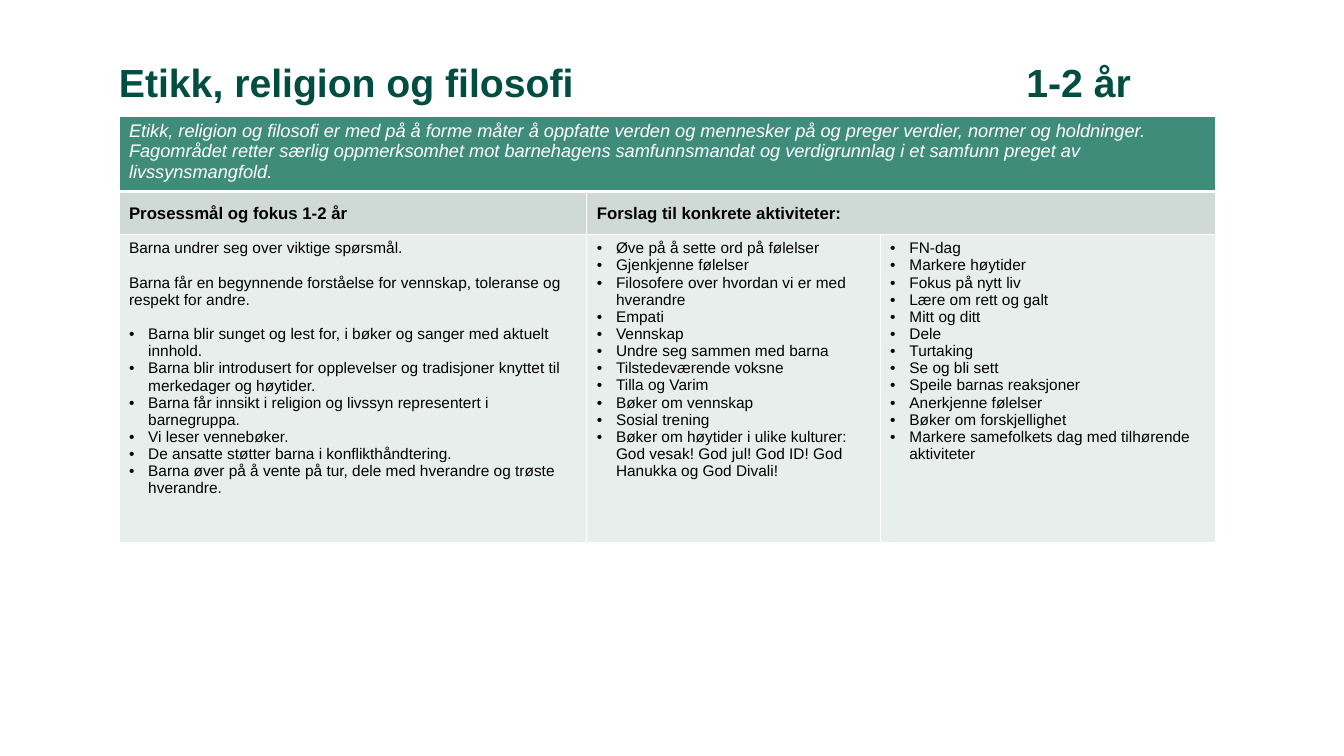
"""Build the slide on ethics, religion and philosophy for ages 1-2."""
from dataclasses import dataclass
from typing import Optional

from lxml import etree
from pptx import Presentation
from pptx import util as u
from pptx.dml import color
from pptx.enum import text
from pptx.oxml import ns

GREEN, WHITE, BLACK = "004D42", "FFFFFF", "000000"
ROW_FILLS = ("3F8C7B", "CFDAD7", "E8EEEC")
COLUMNS = (4.64, 2.91, 3.33)
ROWS = (0.75, 0.43, 3.05)
INTRO = (
    "Etikk, religion og filosofi er med på å forme måter å oppfatte verden og mennesker på "
    "og preger verdier, normer og holdninger. Fagområdet retter særlig oppmerksomhet mot "
    "barnehagens samfunnsmandat og verdigrunnlag i et samfunn preget av livssynsmangfold."
)
AIMS = (
    "Barna undrer seg over viktige spørsmål.",
    "Barna får en begynnende forståelse for vennskap, toleranse og respekt for andre.",
)
FOCUS = (
    "Barna blir sunget og lest for, i bøker og sanger med aktuelt innhold.",
    "Barna blir introdusert for opplevelser og tradisjoner knyttet til merkedager og høytider.",
    "Barna får innsikt i religion og livssyn representert i barnegruppa.",
    "Vi leser vennebøker.",
    "De ansatte støtter barna i konflikthåndtering.",
    "Barna øver på å vente på tur, dele med hverandre og trøste hverandre.",
)
ACTIVITIES = (
    "Øve på å sette ord på følelser",
    "Gjenkjenne følelser",
    "Filosofere over hvordan vi er med hverandre",
    "Empati",
    "Vennskap",
    "Undre seg sammen med barna",
    "Tilstedeværende voksne",
    "Tilla og Varim",
    "Bøker om vennskap",
    "Sosial trening",
    "Bøker om høytider i ulike kulturer: God vesak! God jul! God ID! God Hanukka og God Divali!",
)
MORE_ACTIVITIES = (
    "FN-dag",
    "Markere høytider",
    "Fokus på nytt liv",
    "Lære om rett og galt",
    "Mitt og ditt",
    "Dele",
    "Turtaking",
    "Se og bli sett",
    "Speile barnas reaksjoner",
    "Anerkjenne følelser",
    "Bøker om forskjellighet",
    "Markere samefolkets dag med tilhørende aktiviteter",
)


@dataclass(frozen=True)
class Line:
    """One paragraph and its layout."""

    words: str
    bullet: bool = False
    before: float = 0


@dataclass(frozen=True)
class Panel:
    """One table cell with its contents and format."""

    row: int
    column: int
    lines: tuple[Line, ...]
    size: float = 11
    ink: str = BLACK
    bold: bool = False
    italic: bool = False
    middle: bool = False


def rgb(value: str) -> color.RGBColor:
    """Turn a hex string into a colour."""
    return color.RGBColor.from_string(value)


def bullets(items: tuple[str, ...], gap: float = 0) -> tuple[Line, ...]:
    """Make bulleted lines, with a gap above the first."""
    return tuple(Line(item, True, 0 if i else gap) for i, item in enumerate(items))


def write(frame, lines: tuple[Line, ...], *, size: float, ink: str, bold: bool = False,
          italic: bool = False, tab: Optional[float] = None, spacing: float = 1) -> None:
    """Fill a text frame with formatted paragraphs."""
    for i, line in enumerate(lines):
        para = frame.paragraphs[0] if i == 0 else frame.add_paragraph()
        para.alignment = text.PP_ALIGN.LEFT
        para.line_spacing = spacing
        if line.before:
            para.space_before = u.Pt(line.before)
        props = para._p.get_or_add_pPr()
        if line.bullet:
            props.set("marL", str(u.Inches(0.19)))
            props.set("indent", str(u.Inches(-0.19)))
            etree.SubElement(props, ns.qn("a:buFont"), typeface="Arial")
            etree.SubElement(props, ns.qn("a:buChar"), char="•")
        if tab is not None:
            stops = etree.SubElement(props, ns.qn("a:tabLst"))
            etree.SubElement(stops, ns.qn("a:tab"), pos=str(u.Inches(tab)), algn="l")
        span = para.add_run()
        span.text = line.words
        span.font.name = "Arial"
        span.font.size = u.Pt(size)
        span.font.bold = bold
        span.font.italic = italic
        span.font.color.rgb = rgb(ink)


def set_borders(cell, bottom: float) -> None:
    """Draw white borders round a cell."""
    props = cell._tc.get_or_add_tcPr()
    widths = {"lnL": 1, "lnR": 1, "lnT": 1, "lnB": bottom}
    for i, (side, width) in enumerate(widths.items()):
        edge = etree.Element(ns.qn(f"a:{side}"), w=str(u.Pt(width)))
        fill = etree.SubElement(edge, ns.qn("a:solidFill"))
        etree.SubElement(fill, ns.qn("a:srgbClr"), val=WHITE)
        props.insert(i, edge)


def add_title(page) -> None:
    """Place the heading, with the age group at a tab stop."""
    title = page.shapes.title
    title.left, title.top = u.Inches(1.18), u.Inches(0.54)
    title.width, title.height = u.Inches(11.5), u.Inches(0.61)
    frame = title.text_frame
    frame.margin_left = frame.margin_right = frame.margin_top = frame.margin_bottom = 0
    frame.vertical_anchor = text.MSO_ANCHOR.MIDDLE
    write(frame, (Line("Etikk, religion og filosofi\t1-2 år"),),
          size=28, ink=GREEN, bold=True, tab=9, spacing=0.9)


def add_plan(page, panels: tuple[Panel, ...]) -> None:
    """Add the table of aims and activities."""
    plan = page.shapes.add_table(
        len(ROWS), len(COLUMNS), u.Inches(1.18), u.Inches(1.15),
        u.Inches(sum(COLUMNS)), u.Inches(sum(ROWS))).table
    plan.first_row = plan.horz_banding = False
    for column, width in zip(plan.columns, COLUMNS):
        column.width = u.Inches(width)
    for row, height in zip(plan.rows, ROWS):
        row.height = u.Inches(height)
    plan.cell(0, 0).merge(plan.cell(0, 2))
    plan.cell(1, 1).merge(plan.cell(1, 2))
    for i, fill in enumerate(ROW_FILLS):
        for j in range(len(COLUMNS)):
            cell = plan.cell(i, j)
            cell.fill.solid()
            cell.fill.fore_color.rgb = rgb(fill)
            set_borders(cell, 3 if i == 0 else 1)
    for panel in panels:
        cell = plan.cell(panel.row, panel.column)
        cell.vertical_anchor = text.MSO_ANCHOR.MIDDLE if panel.middle else text.MSO_ANCHOR.TOP
        write(cell.text_frame, panel.lines, size=panel.size, ink=panel.ink,
              bold=panel.bold, italic=panel.italic)


def main() -> None:
    """Build and save the deck."""
    deck = Presentation()
    deck.slide_width, deck.slide_height = u.Inches(13.33), u.Inches(7.5)
    page = deck.slides.add_slide(deck.slide_layouts[5])
    add_title(page)
    gap = 12.3
    aims = (Line(AIMS[0]), Line(AIMS[1], before=gap))
    add_plan(page, (
        Panel(0, 0, (Line(INTRO),), size=13, ink=WHITE, italic=True),
        Panel(1, 0, (Line("Prosessmål og fokus 1-2 år"),), size=12, bold=True, middle=True),
        Panel(1, 1, (Line("Forslag til konkrete aktiviteter:"),), size=12, bold=True,
              middle=True),
        Panel(2, 0, aims + bullets(FOCUS, gap)),
        Panel(2, 1, bullets(ACTIVITIES)),
        Panel(2, 2, bullets(MORE_ACTIVITIES)),
    ))
    deck.save("out.pptx")


if __name__ == "__main__":
    main()
